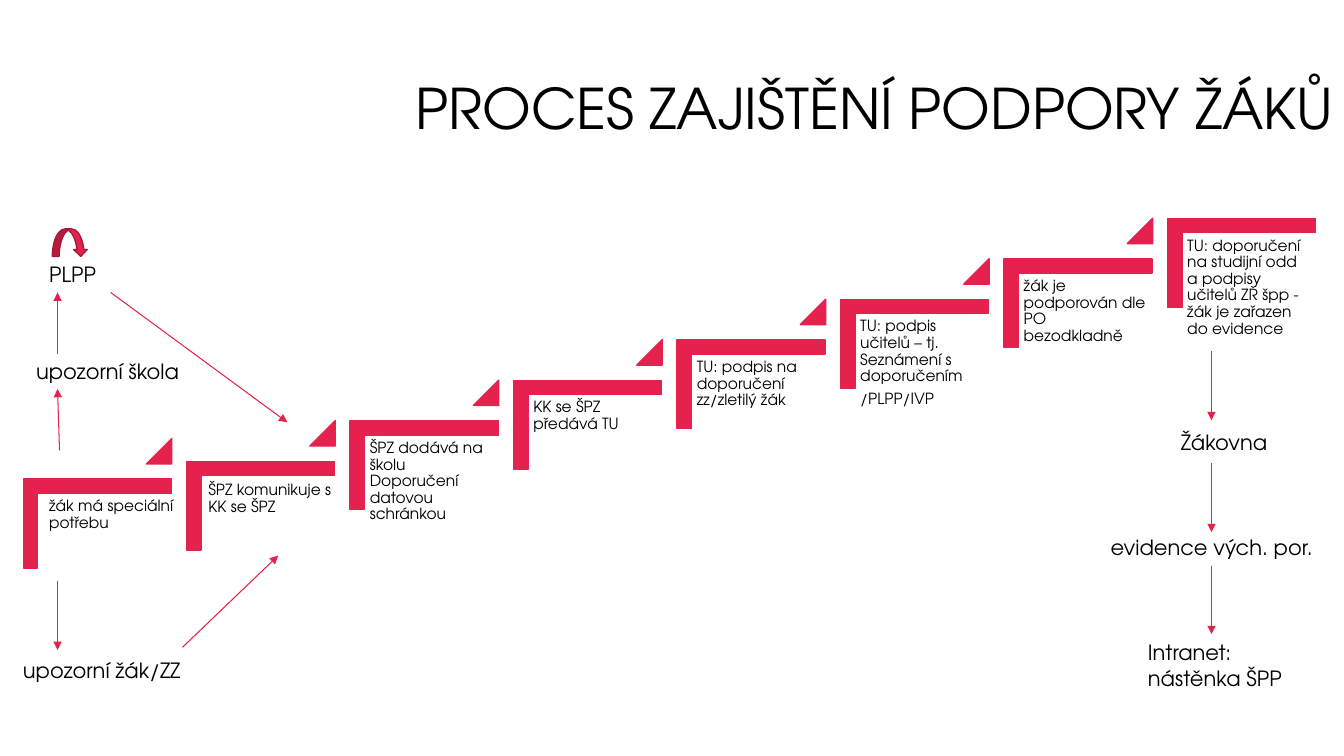
from lxml import etree
from pptx import Presentation
from pptx.dml.color import RGBColor
from pptx.enum.shapes import MSO_CONNECTOR, MSO_SHAPE
from pptx.enum.text import MSO_ANCHOR, PP_ALIGN
from pptx.oxml.ns import qn
from pptx.util import Cm, Pt

STRAIGHT = MSO_CONNECTOR.STRAIGHT
CORNER = MSO_SHAPE.CORNER
TRIANGLE = MSO_SHAPE.ISOSCELES_TRIANGLE
CURVED_ARROW = MSO_SHAPE.CURVED_DOWN_ARROW
TOP, MIDDLE = MSO_ANCHOR.TOP, MSO_ANCHOR.MIDDLE
LEFT, RIGHT = PP_ALIGN.LEFT, PP_ALIGN.RIGHT

FONT = "TeX Gyre Adventor"
COLORS = {"red": "E5224E", "dark red": "A9193A", "text": "000000"}

# Content, all lengths in centimetres
TITLE = "PROCES ZAJIŠTĚNÍ PODPORY ŽÁKŮ"
STEPS = [
    ["žák má speciální potřebu"],
    ["ŠPZ komunikuje s KK se ŠPZ"],
    ["ŠPZ dodává na školu Doporučení datovou schránkou"],
    ["KK se ŠPZ předává TU"],
    ["TU: podpis na doporučení zz/zletilý žák"],
    ["TU: podpis učitelů – tj. Seznámení s doporučením", "/PLPP/IVP"],
    ["žák je podporován dle PO bezodkladně"],
    ["TU: doporučení na studijní odd a podpisy učitelů ZŘ špp - "
     "žák je zařazen do evidence"],
]
LABELS = [  # text, left, top, width, height
    ("upozorní škola", 0.66, 8.92, 4.42, 0.9),
    ("upozorní žák/ZZ", 0.33, 16.45, 5.08, 0.9),
    ("PLPP", 0.99, 6.47, 2.13, 0.9),
    ("Žákovna", 29.51, 10.69, 3.2, 0.9),
    ("evidence vých. por.", 27.74, 13.34, 5.79, 0.9),
    ("Intranet: nástěnka ŠPP", 28.68, 16, 4.06, 1.55),
]
ARROWS = [  # from x, from y, to x, to y
    (1.5, 11.35, 1.45, 9.8),
    (1.45, 14.63, 1.45, 16.38),
    (1.45, 8.92, 1.45, 7.37),
    (2.79, 7.37, 7.24, 10.64),
    (4.6, 16.31, 7.01, 14),
    (30.53, 8.84, 30.53, 10.59),
    (30.53, 11.66, 30.53, 13.41),
    (30.53, 14.25, 30.53, 15.98),
]

# Staircase geometry
STEP_LEFT, STEP_PITCH = 1.33, 4.12
FIRST_TOP, SECOND_TOP, STEP_RISE = 11.33, 10.88, 1.02
CORNER_WIDTH, CORNER_HEIGHT = 2.24, 3.73
# Text offset from its corner, and text width
TEXT_PLACES = {0: (-0.22, 1.1, 3.5), 1: (-0.33, 1.15, 3.5)}
USUAL_PLACE = (-0.38, 1.1, 3.35)


def color(name):
    return RGBColor.from_string(COLORS[name])


def add_text(page, paragraphs, left, top, width, height, size, inset=None,
             anchor=TOP, align=LEFT, spacing=1.0, after=0):
    box = page.shapes.add_textbox(Cm(left), Cm(top), Cm(width), Cm(height))
    frame = box.text_frame
    frame.word_wrap = True
    frame.vertical_anchor = anchor
    if inset is not None:
        frame.margin_left = frame.margin_right = Cm(inset)
        frame.margin_top = frame.margin_bottom = Cm(inset)
    frame.text = "\n".join(paragraphs)
    for para in frame.paragraphs:
        para.alignment = align
        para.line_spacing = spacing
        para.space_after = Pt(after)
        para.font.name = FONT
        para.font.size = Pt(size)
        para.font.color.rgb = color("text")


def add_red_shape(page, kind, left, top, width, height, adjustments=(), outline="red"):
    shape = page.shapes.add_shape(kind, Cm(left), Cm(top), Cm(width), Cm(height))
    shape.shadow.inherit = False
    shape.fill.solid()
    shape.fill.fore_color.rgb = color("red")
    shape.line.color.rgb = color(outline)
    shape.line.width = Pt(1)
    for index, value in enumerate(adjustments):
        shape.adjustments[index] = value
    return shape


def add_arrow(page, *ends):
    arrow = page.shapes.add_connector(STRAIGHT, *map(Cm, ends))
    arrow.line.color.rgb = color("red")
    arrow.line.width = Pt(0.75)
    outline = arrow.line._get_or_add_ln()
    etree.SubElement(outline, qn("a:tailEnd"), type="triangle")
    etree.SubElement(outline.getparent(), qn("a:effectLst"))


def add_step(page, index, paragraphs):
    left = STEP_LEFT + index * STEP_PITCH
    top = SECOND_TOP - (index - 1) * STEP_RISE if index else FIRST_TOP
    corner = add_red_shape(page, CORNER, left, top, CORNER_WIDTH, CORNER_HEIGHT,
                           (0.161, 0.161))
    corner.rotation = 90
    shift_x, shift_y, width = TEXT_PLACES.get(index, USUAL_PLACE)
    add_text(page, paragraphs, left + shift_x, top + shift_y, width, 2.95, 11,
             inset=0.13, spacing=0.9, after=4)
    if index < len(STEPS) - 1:
        add_red_shape(page, TRIANGLE, left + 2.36, top - 0.28, 0.64, 0.64, (1,))


def main():
    deck = Presentation()
    deck.slide_width, deck.slide_height = Cm(33.87), Cm(19.05)
    page = deck.slides.add_slide(deck.slide_layouts[6])

    # Title
    add_text(page, [TITLE], 9.93, 1.68, 23.93, 2.24, 40,
             anchor=MIDDLE, align=RIGHT, spacing=0.9)

    # Staircase of steps
    for index, paragraphs in enumerate(STEPS):
        add_step(page, index, paragraphs)

    # Side branches
    for text, *place in LABELS:
        add_text(page, [text], *place, 15)
    for ends in ARROWS:
        add_arrow(page, *ends)
    add_red_shape(page, CURVED_ARROW, 1.32, 5.77, 0.89, 0.69, outline="dark red")

    deck.save("out.pptx")


if __name__ == "__main__":
    main()
